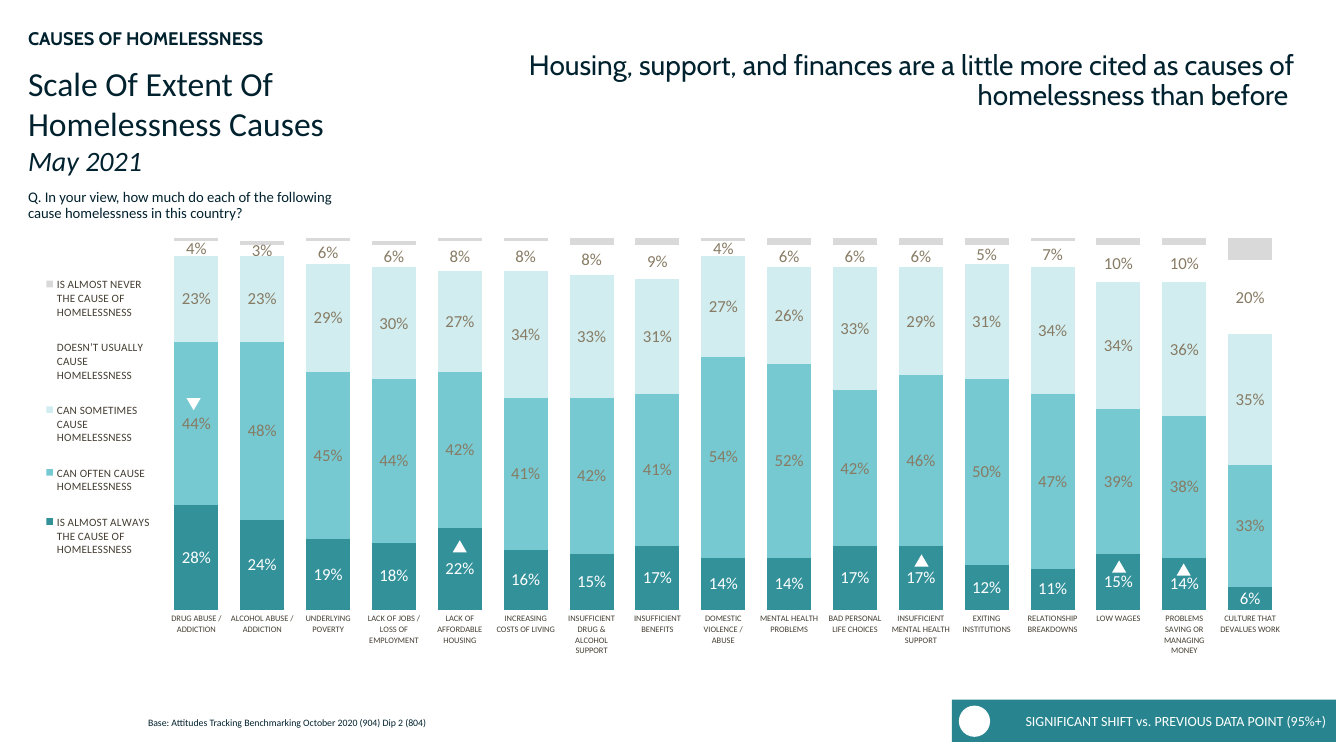
from lxml import etree
from pptx import Presentation
from pptx import util as u
from pptx.chart.data import CategoryChartData
from pptx.dml.color import RGBColor
from pptx.enum import chart as ch, shapes, text

SCALE = 9144
NAVY, TEAL, WHITE, BROWN, UMBER = "00212E", "28858F", "FFFFFF", "877B64", "443E32"
TOP, MIDDLE = text.MSO_ANCHOR.TOP, text.MSO_ANCHOR.MIDDLE
LEFT, RIGHT = text.PP_ALIGN.LEFT, text.PP_ALIGN.RIGHT


def paint(target, color):
    if hasattr(target, "solid"):
        target.solid()
        target.fore_color.rgb = RGBColor.from_string(color)
    else:
        target.color.rgb = RGBColor.from_string(color)


def style(font, size, name, color, **extra):
    values = {"size": u.Pt(size), "name": name, **extra}
    for key, value in values.items():
        setattr(font, key, value)
    paint(font, color)


presentation = Presentation()
presentation.slide_width = 1333 * SCALE
presentation.slide_height = 750 * SCALE
slide = presentation.slides.add_slide(presentation.slide_layouts[6])

calibri = {"name": "Calibri", "color": NAVY}
cabin = {"name": "Cabin", "color": NAVY}
text_boxes = [
    ((18, 25, 330, 42), TOP, LEFT, 0.9, [
        ("CAUSES OF HOMELESSNESS", {"size": 13, "bold": True, **cabin})]),
    ((18, 57, 347, 95), TOP, LEFT, 1, [
        ("Scale Of Extent Of Homelessness Causes", {"size": 24, **calibri}),
        ("May 2021", {"size": 20, "italic": True, **calibri})]),
    ((137, 702, 597, 32), MIDDLE, LEFT, 0.9, [
        ("Base: Attitudes Tracking Benchmarking October 2020 (904) Dip 2 (804)",
         {"size": 7, **calibri})]),
    ((18, 188, 330, 32), MIDDLE, LEFT, 0.9, [
        ("Q. In your view, how much do each of the following cause homelessness in this country?",
         {"size": 10.5, **calibri})]),
    ((495, 46, 799, 42), TOP, RIGHT, 0.9, [
        ("Housing, support, and finances are a little more cited as causes of "
         "homelessness than before ", {"size": 20, **cabin})]),
]
for place, anchor, alignment, spacing, lines in text_boxes:
    shape = slide.shapes.add_textbox(*[length * SCALE for length in place])
    frame = shape.text_frame
    frame.word_wrap = True
    frame.vertical_anchor = anchor
    for index, (words, font_format) in enumerate(lines):
        paragraph = frame.add_paragraph() if index else frame.paragraphs[0]
        paragraph.alignment = alignment
        paragraph.line_spacing = spacing
        run = paragraph.add_run()
        run.text = words
        style(run.font, **font_format)

causes = [
    "DRUG ABUSE / ADDICTION", "ALCOHOL ABUSE / ADDICTION", "UNDERLYING POVERTY",
    "LACK OF JOBS / LOSS OF EMPLOYMENT", "LACK OF AFFORDABLE HOUSING",
    "INCREASING COSTS OF LIVING", "INSUFFICIENT DRUG & ALCOHOL SUPPORT",
    "INSUFFICIENT BENEFITS", "DOMESTIC VIOLENCE / ABUSE", "MENTAL HEALTH PROBLEMS",
    "BAD PERSONAL LIFE CHOICES", "INSUFFICIENT MENTAL HEALTH SUPPORT",
    "EXITING INSTITUTIONS", "RELATIONSHIP BREAKDOWNS", "LOW WAGES",
    "PROBLEMS SAVING OR MANAGING MONEY", "CULTURE THAT DEVALUES WORK",
]
answers = [
    ("IS ALMOST ALWAYS THE CAUSE OF HOMELESSNESS", "33919A", WHITE,
     [28, 24, 19, 18, 22, 16, 15, 17, 14, 14, 17, 17, 12, 11, 15, 14, 6]),
    ("CAN OFTEN CAUSE HOMELESSNESS", "76C9D1", BROWN,
     [44, 48, 45, 44, 42, 41, 42, 41, 54, 52, 42, 46, 50, 47, 39, 38, 33]),
    ("CAN SOMETIMES CAUSE HOMELESSNESS", "D1EDF0", BROWN,
     [23, 23, 29, 30, 27, 34, 33, 31, 27, 26, 33, 29, 31, 34, 34, 36, 35]),
    ("DOESN’T USUALLY CAUSE HOMELESSNESS", WHITE, BROWN,
     [4, 3, 6, 6, 8, 8, 8, 9, 4, 6, 6, 6, 5, 7, 10, 10, 20]),
    ("IS ALMOST NEVER THE CAUSE OF HOMELESSNESS", "D9D9D9", None,
     [1, 1, 2, 1, 1, 2, 2, 2, 1, 2, 2, 2, 2, 2, 2, 2, 7]),
]
chart_data = CategoryChartData(number_format="0%")
chart_data.categories = causes
for name, fill, label_color, percents in answers:
    chart_data.add_series(name, [percent / 100 for percent in percents])
chart = slide.shapes.add_chart(
    ch.XL_CHART_TYPE.COLUMN_STACKED,
    *[length * SCALE for length in (35, 219, 1259, 444)], chart_data).chart
style(chart.font, 10, **cabin)
chart.has_title = False
chart.has_legend = True
legend = chart.legend
legend.position = ch.XL_LEGEND_POSITION.LEFT
legend.include_in_layout = False
style(legend.font, 8, "Calibri", UMBER)

plot = chart.plots[0]
plot.gap_width = 50
plot.overlap = 100
plot.vary_by_categories = False
for series, (name, fill, label_color, percents) in zip(plot.series, answers):
    paint(series.format.fill, fill)
    if label_color:
        labels = series.data_labels
        label_format = {"show_value": True, "number_format": "0%",
                        "number_format_is_linked": False,
                        "position": ch.XL_LABEL_POSITION.CENTER}
        for key, value in label_format.items():
            setattr(labels, key, value)
        style(labels.font, 12, "Calibri", label_color)

value_format = {"minimum_scale": 0, "maximum_scale": 1, "major_unit": 0.3,
                "tick_label_position": ch.XL_TICK_LABEL_POSITION.NONE}
for key, value in value_format.items():
    setattr(chart.value_axis, key, value)
for axis in (chart.category_axis, chart.value_axis):
    axis.has_major_gridlines = False
    axis.major_tick_mark = ch.XL_TICK_MARK.NONE
    axis.minor_tick_mark = ch.XL_TICK_MARK.NONE
    axis.format.line.fill.background()
style(chart.category_axis.tick_labels.font, 6, "Calibri", UMBER)

C = "{http://schemas.openxmlformats.org/drawingml/2006/chart}"
plot_area = chart.category_axis._element.getparent()
plot_place = [("layoutTarget", "inner"), ("xMode", "edge"), ("yMode", "edge"),
              ("x", 0.101), ("y", 0.038), ("w", 0.882), ("h", 0.831)]
legend_place = [("xMode", "edge"), ("yMode", "edge"),
                ("x", 0.007), ("y", 0.08), ("w", 0.085), ("h", 0.72)]
for owner, index, place in ((plot_area, 0, plot_place), (legend._element, 1, legend_place)):
    for old_layout in owner.findall(C + "layout"):
        owner.remove(old_layout)
    layout = etree.Element(C + "layout")
    owner.insert(index, layout)
    manual = etree.SubElement(layout, C + "manualLayout")
    for tag, value in place:
        etree.SubElement(manual, C + tag).set("val", str(value))

RECTANGLE, OVAL = shapes.MSO_SHAPE.RECTANGLE, shapes.MSO_SHAPE.OVAL
TRIANGLE = shapes.MSO_SHAPE.ISOSCELES_TRIANGLE
markers = [
    (RECTANGLE, (944, 694, 381, 42), 0, TEAL),
    (OVAL, (951, 700, 31, 31), 0, WHITE),
]
for left, top, rotation in [
    (449, 536, 0), (1167, 559, 0), (185, 395, 180), (1103, 556, 0), (907, 550, 0),
]:
    markers.append((TRIANGLE, (left, top, 14, 12), rotation, WHITE))
for kind, place, rotation, color in markers:
    shape = slide.shapes.add_shape(kind, *[length * SCALE for length in place])
    shape.shadow.inherit = False
    shape.rotation = rotation
    paint(shape.fill, color)
    shape.line.fill.background()
    if kind == RECTANGLE:
        shape.text_frame.word_wrap = True
        shape.text_frame.vertical_anchor = MIDDLE
        paragraph = shape.text_frame.paragraphs[0]
        paragraph.alignment = RIGHT
        run = paragraph.add_run()
        run.text = "SIGNIFICANT SHIFT vs. PREVIOUS DATA POINT (95%+)"
        style(run.font, 10, "Calibri", WHITE)

presentation.save("out.pptx")
